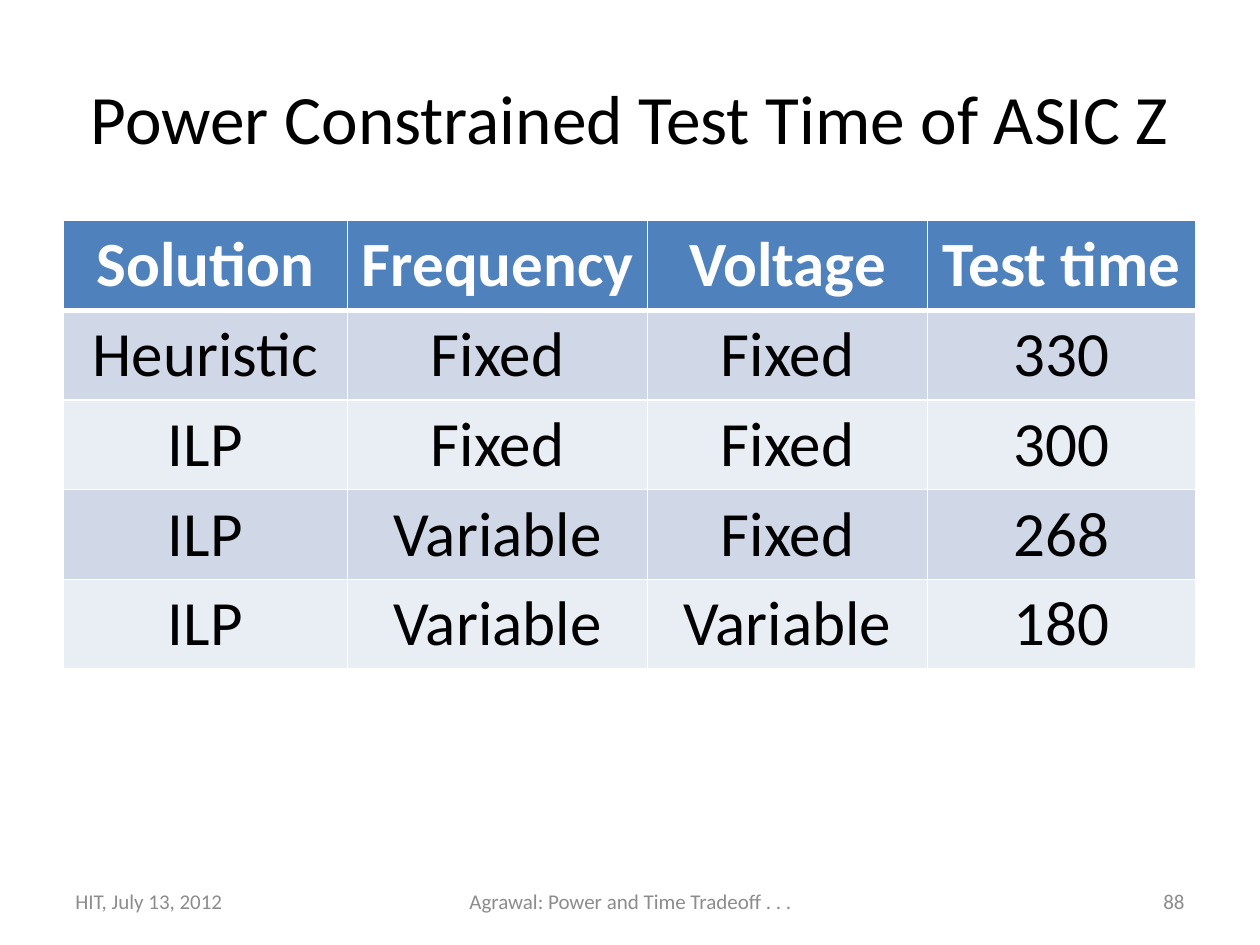
"""Build the slide that compares test times of ASIC Z under a power limit."""
from typing import NamedTuple

from lxml import etree
from pptx import Presentation
from pptx import util as u
from pptx.dml.color import RGBColor
from pptx.enum import text as t
from pptx.oxml import ns

WIDTH, HEIGHT = 10, 7.5
MARGIN = 0.05 * WIDTH
ROW_HEIGHT = 0.71
COLUMN_WIDTHS = (2.26, 2.38, 2.22, 2.13)
HEADER_FILL = "4F81BD"
BAND_FILLS = ("D0D8E8", "E9EDF4")
ROWS = (
    ("Solution", "Frequency", "Voltage", "Test time"),
    ("Heuristic", "Fixed", "Fixed", "330"),
    ("ILP", "Fixed", "Fixed", "300"),
    ("ILP", "Variable", "Fixed", "268"),
    ("ILP", "Variable", "Variable", "180"),
)


class FooterPart(NamedTuple):
    """One footer text with its horizontal place and alignment."""

    words: str
    left: float
    width: float
    align: t.PP_ALIGN


FOOTER = (
    FooterPart("HIT, July 13, 2012", MARGIN, 2.33, t.PP_ALIGN.LEFT),
    FooterPart("Agrawal: Power and Time Tradeoff . . .", 3.42, 3.17, t.PP_ALIGN.CENTER),
    FooterPart("88", 7.17, 2.33, t.PP_ALIGN.RIGHT),
)


def color(value: str) -> RGBColor:
    """Turn a hex string into a colour."""
    return RGBColor.from_string(value)


def write(frame, words: str, *, size: float, fill: str = "000000",
          bold: bool = False, align: t.PP_ALIGN = t.PP_ALIGN.CENTER) -> None:
    """Put formatted, vertically centred text in a text frame."""
    frame.word_wrap = True
    frame.vertical_anchor = t.MSO_ANCHOR.MIDDLE
    paragraph = frame.paragraphs[0]
    paragraph.alignment = align
    run = paragraph.add_run()
    run.text = words
    run.font.name = "Calibri"
    run.font.size = u.Pt(size)
    run.font.bold = bold
    run.font.color.rgb = color(fill)


def set_borders(cell, top: float, bottom: float) -> None:
    """Give a cell white borders, with side lines of one point."""
    properties = cell._tc.get_or_add_tcPr()
    widths = {"a:lnL": 1, "a:lnR": 1, "a:lnT": top, "a:lnB": bottom}
    for index, (tag, width) in enumerate(widths.items()):
        line = etree.Element(ns.qn(tag), w=str(u.Pt(width)))
        solid = etree.SubElement(line, ns.qn("a:solidFill"))
        etree.SubElement(solid, ns.qn("a:srgbClr"), val="FFFFFF")
        properties.insert(index, line)


def add_results(slide) -> None:
    """Draw the banded table of results."""
    table = slide.shapes.add_table(
        len(ROWS), len(COLUMN_WIDTHS), u.Inches(MARGIN), u.Inches(1.75),
        u.Inches(sum(COLUMN_WIDTHS)), u.Inches(ROW_HEIGHT * len(ROWS))).table
    for column, width in zip(table.columns, COLUMN_WIDTHS):
        column.width = u.Inches(width)
    for row_index, words_in_row in enumerate(ROWS):
        header = row_index == 0
        table.rows[row_index].height = u.Inches(ROW_HEIGHT)
        for column_index, words in enumerate(words_in_row):
            cell = table.cell(row_index, column_index)
            cell.vertical_anchor = t.MSO_ANCHOR.MIDDLE
            cell.fill.solid()
            cell.fill.fore_color.rgb = color(
                HEADER_FILL if header else BAND_FILLS[(row_index - 1) % 2])
            set_borders(cell, top=3 if row_index == 1 else 1, bottom=3 if header else 1)
            write(cell.text_frame, words, size=36, bold=header,
                  fill="FFFFFF" if header else "000000")


def add_footer(slide, part: FooterPart) -> None:
    """Draw one part of the footer."""
    box = slide.shapes.add_textbox(
        u.Inches(part.left), u.Inches(6.95), u.Inches(part.width), u.Inches(0.4))
    write(box.text_frame, part.words, size=12, fill="8C8C8C", align=part.align)


def main() -> None:
    """Build and save the presentation."""
    presentation = Presentation()
    presentation.slide_width = u.Inches(WIDTH)
    presentation.slide_height = u.Inches(HEIGHT)
    slide = presentation.slides.add_slide(presentation.slide_layouts[5])
    title = slide.shapes.title
    title.left, title.top = u.Inches(MARGIN), u.Inches(0.3)
    title.width, title.height = u.Inches(WIDTH - 2 * MARGIN), u.Inches(1.25)
    write(title.text_frame, "Power Constrained Test Time of ASIC Z", size=39.6)
    add_results(slide)
    for part in FOOTER:
        add_footer(slide, part)
    presentation.save("out.pptx")


if __name__ == "__main__":
    main()
